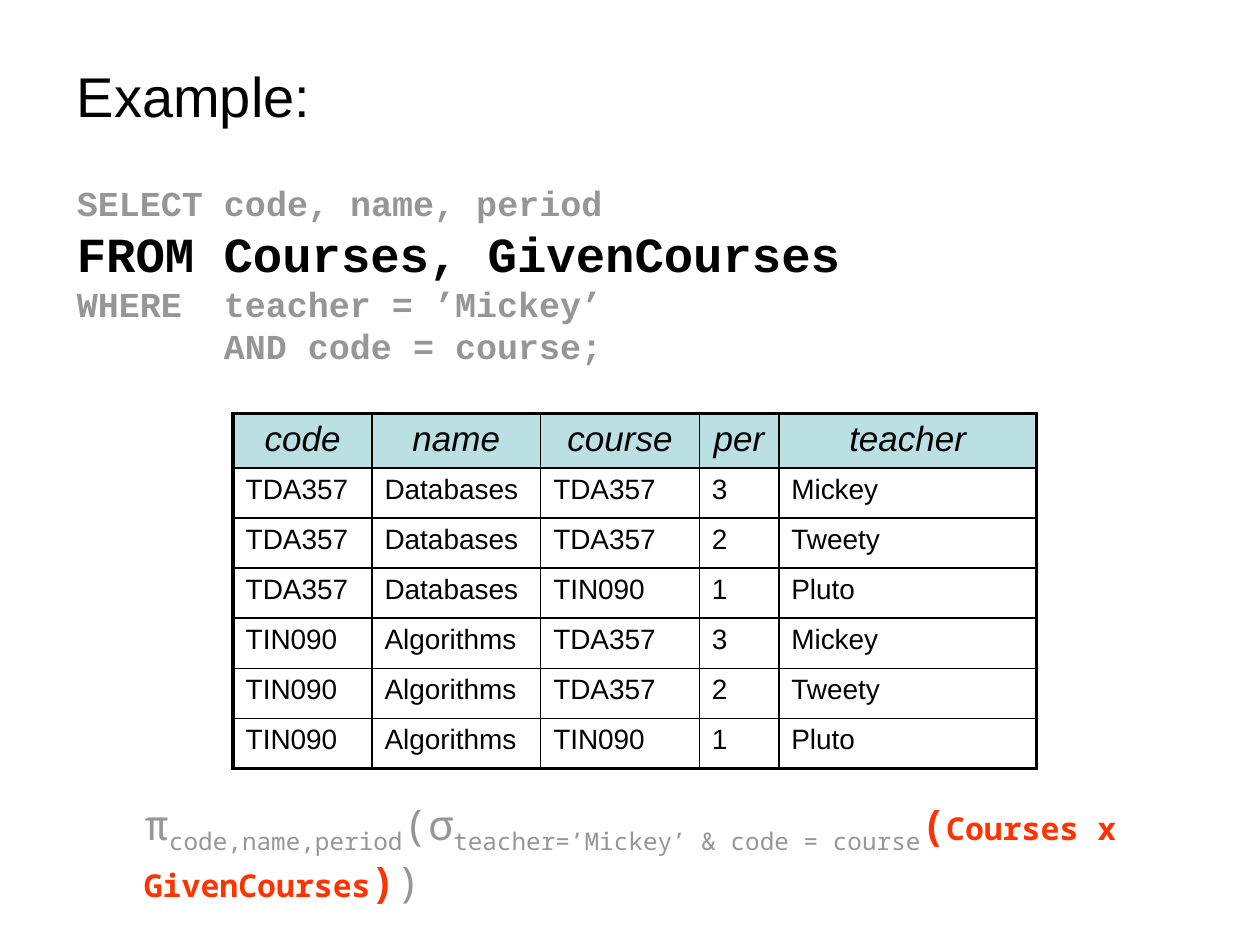
import pptx
import pptx.dml.color
import pptx.enum.text
import pptx.oxml
import pptx.oxml.ns
import pptx.util

Cm = pptx.util.Cm
Pt = pptx.util.Pt
GREY, RED, BLACK = "969696", "FF3300", "000000"


def colour(hex_text):
    """Turn a hex string into a colour."""
    return pptx.dml.color.RGBColor.from_string(hex_text)


def write(paragraph, text, font="Arial", size=16, ink=BLACK, bold=False, italic=False, subscript=False):
    """Add formatted text to a paragraph, with a line break at each newline."""
    for number, line in enumerate(text.split("\n")):
        if number:
            paragraph.add_line_break()
        run = paragraph.add_run()
        run.text = line
        run.font.name, run.font.size = font, Pt(size)
        run.font.bold, run.font.italic = bold, italic
        run.font.color.rgb = colour(ink)
        if subscript:
            run.font._element.set("baseline", "-25000")


class Deck:
    """Hold the table style and the current slide."""

    header_fill, body_fill = "BBE0E3", "FFFFFF"
    outer_line, inner_line = 2.25, 1

    def __init__(self, width, height):
        """Start a presentation with one blank slide."""
        self.file = pptx.Presentation()
        self.file.slide_width, self.file.slide_height = Cm(width), Cm(height)
        self.slide = self.file.slides.add_slide(self.file.slide_layouts[6])

    def text(self, left, top, width, height, paragraphs, hanging=0, margins=(0.25, 0.13), middle=False):
        """Add a text box of paragraphs made of formatted parts, the last one with a hanging indent."""
        frame = self.slide.shapes.add_textbox(Cm(left), Cm(top), Cm(width), Cm(height)).text_frame
        frame.word_wrap = True
        frame.margin_left, frame.margin_top = (Cm(margin) for margin in margins)
        if middle:
            frame.margin_bottom = frame.margin_top
            frame.vertical_anchor = pptx.enum.text.MSO_ANCHOR.MIDDLE
        for number, parts in enumerate(paragraphs):
            paragraph = frame.add_paragraph() if number else frame.paragraphs[0]
            for words, style in parts:
                write(paragraph, words, **style)
        if hanging:
            properties = paragraph._p.get_or_add_pPr()
            properties.set("marL", str(Pt(hanging)))
            properties.set("indent", str(-Pt(hanging)))

    def border(self, cell, side, points):
        """Draw one side of a cell."""
        cell._tc.get_or_add_tcPr().append(pptx.oxml.parse_xml(
            f'<a:ln{side} {pptx.oxml.ns.nsdecls("a")} w="{Pt(points)}"><a:solidFill>'
            f'<a:srgbClr val="{BLACK}"/></a:solidFill></a:ln{side}>'))

    def table(self, left, top, widths, header_height, row_height, rows):
        """Add a table with a tinted header and a heavier outer frame."""
        heights = [header_height] + [row_height] * (len(rows) - 1)
        grid = self.slide.shapes.add_table(
            len(rows), len(widths), Cm(left), Cm(top), Cm(sum(widths)), Cm(sum(heights))).table
        for column, width in zip(grid.columns, widths):
            column.width = Cm(width)
        for row, height in zip(grid.rows, heights):
            row.height = Cm(height)
        for r, values in enumerate(rows):
            for c, value in enumerate(values):
                cell = grid.cell(r, c)
                edges = {"L": c == 0, "R": c == len(widths) - 1, "T": r == 0, "B": r == len(rows) - 1}
                for side, outer in edges.items():
                    self.border(cell, side, self.outer_line if outer else self.inner_line)
                cell.fill.solid()
                cell.fill.fore_color.rgb = colour(self.body_fill if r else self.header_fill)
                paragraph = cell.text_frame.paragraphs[0]
                if r == 0:
                    paragraph.alignment = pptx.enum.text.PP_ALIGN.CENTER
                write(paragraph, value, size=16 if r else 20, italic=r == 0)


def main():
    """Build the slide and save it."""
    deck = Deck(25.4, 19.05)
    deck.text(1.3, 1.12, 22.86, 17.4, [[("Example:", dict(size=32))]])

    clause = dict(font="Courier New", size=20, ink=GREY, bold=True)
    deck.text(1.3, 3.53, 16.59, 4.01, [
        [("SELECT code, name, period", clause)],
        [("FROM Courses, GivenCourses", clause | dict(size=28, ink=BLACK))],
        [("WHERE\tteacher = ’Mickey’\nAND code = course;", clause)],
    ], hanging=84)

    courses = [("TDA357", "Databases"), ("TIN090", "Algorithms")]
    given_courses = [("TDA357", "3", "Mickey"), ("TDA357", "2", "Tweety"), ("TIN090", "1", "Pluto")]
    product = [course + given for course in courses for given in given_courses]
    deck.table(4.7, 8.33, [2.8, 3.4, 3.2, 1.6, 5.2], 1.09, 1.01,
               [("code", "name", "course", "per", "teacher")] + product)

    operator = dict(font="Noto Sans Mono", size=24, ink=GREY)
    condition = operator | dict(subscript=True)
    operand = operator | dict(ink=RED, bold=True)
    deck.text(0, 16.54, 25.4, 1.27, [[
        ("π", operator),
        ("code,name,period", condition),
        ("(σ", operator),
        ("teacher=’Mickey’ & code = course", condition),
        ("(", operand),
        ("Courses x GivenCourses", operand | dict(size=18)),
        (")", operand),
        (")", operator),
    ]], margins=(2.9, 0), middle=True)
    deck.file.save("out.pptx")


if __name__ == "__main__":
    main()
